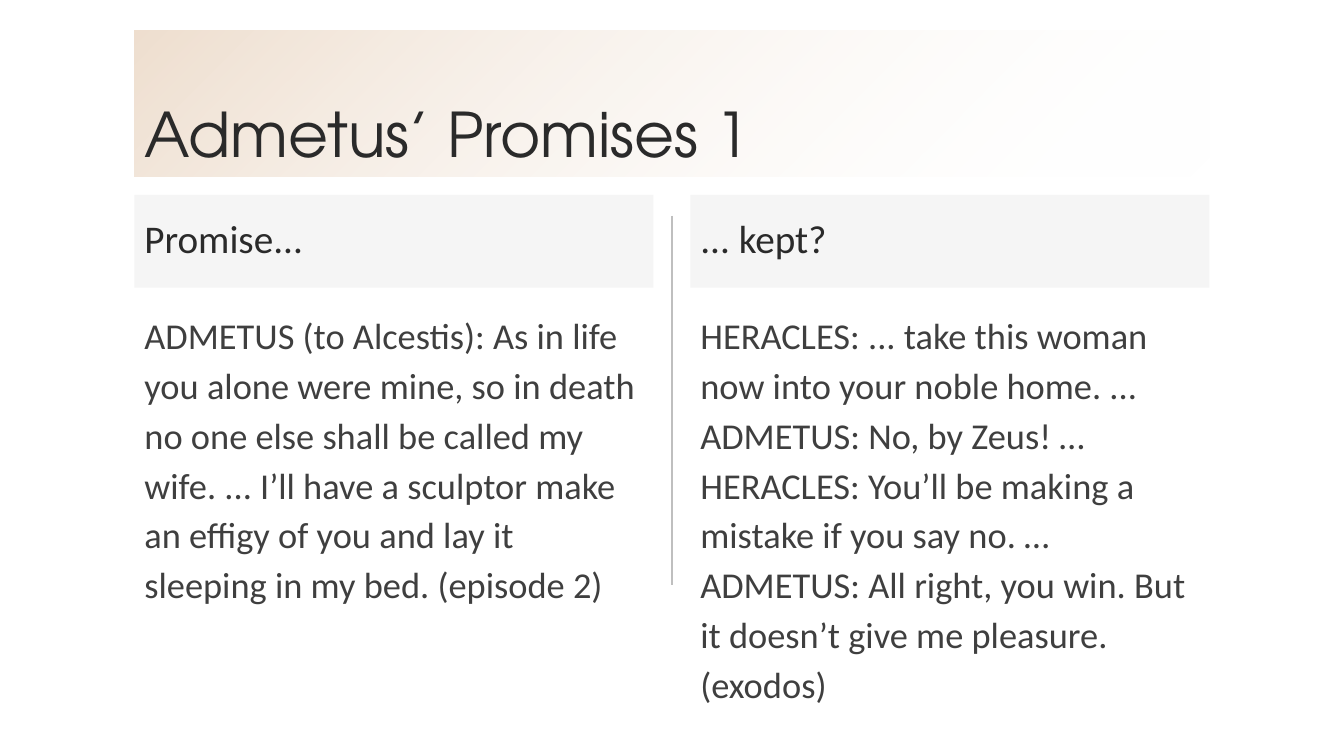
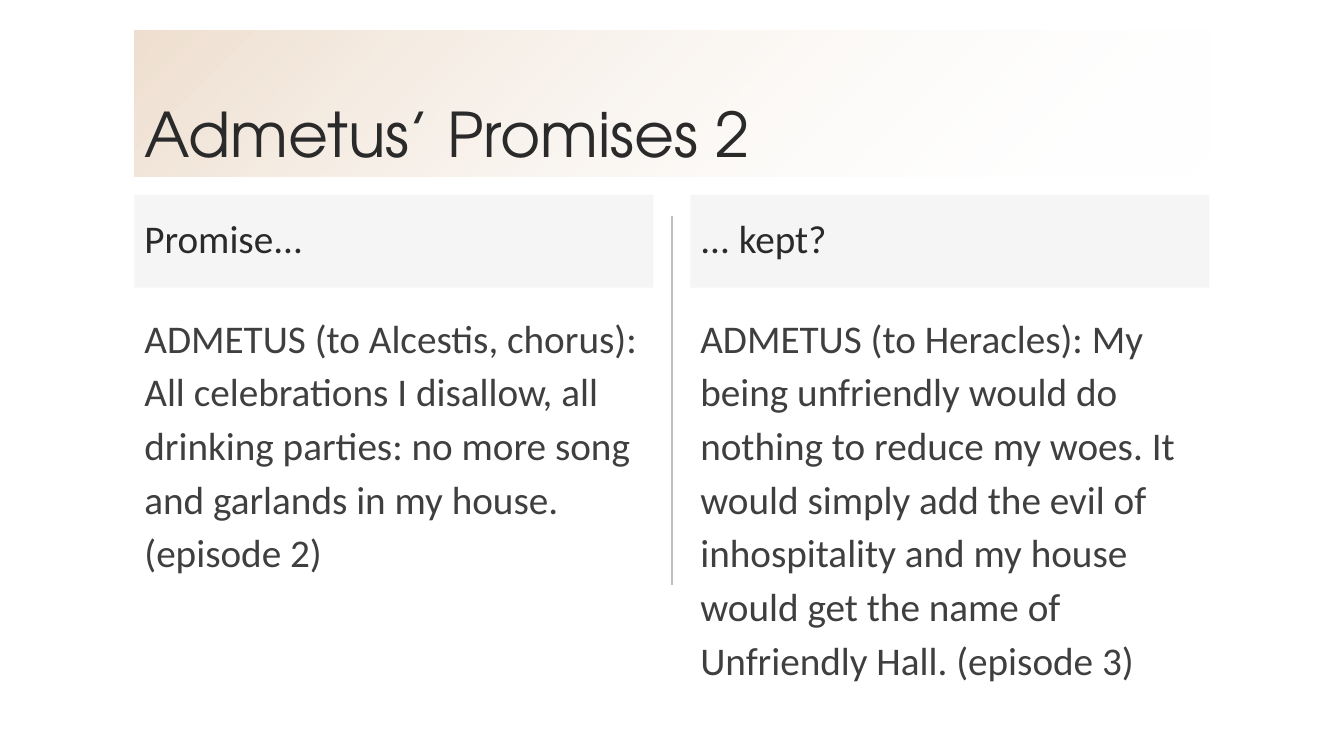
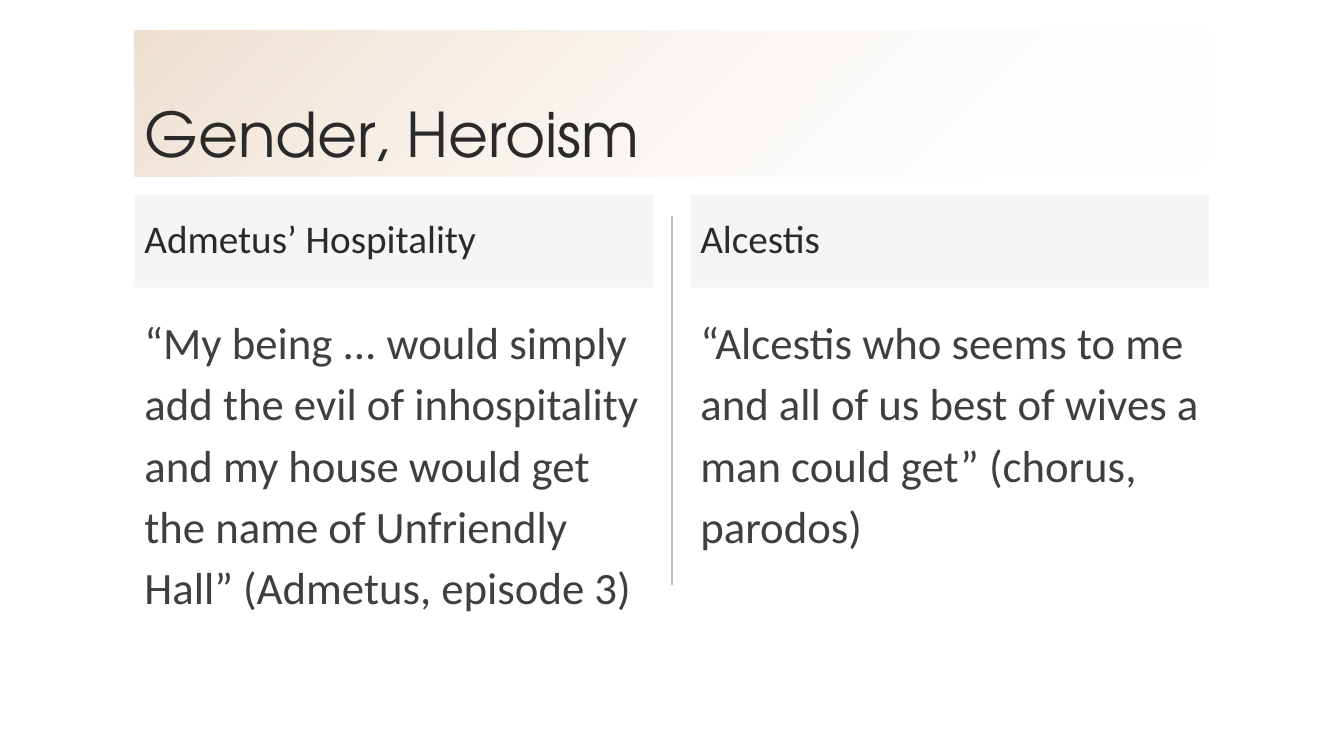
from lxml import etree
from pptx import Presentation
from pptx.dml.color import RGBColor
from pptx.enum.shapes import MSO_CONNECTOR, MSO_SHAPE
from pptx.enum.text import MSO_ANCHOR, PP_ALIGN
from pptx.oxml.ns import qn
from pptx.util import Cm, Pt

RECT = MSO_SHAPE.RECTANGLE
STRAIGHT = MSO_CONNECTOR.STRAIGHT
TOP, MIDDLE, BOTTOM = MSO_ANCHOR.TOP, MSO_ANCHOR.MIDDLE, MSO_ANCHOR.BOTTOM
LEFT = PP_ALIGN.LEFT

# Each column is a heading and its paragraphs.
SLIDES = [
    {
        "title": "Admetus’ Promises 1",
        "size": 26,
        "columns": [
            ("Promise...", [
                "ADMETUS (to Alcestis): As in life you alone were mine, so in death "
                "no one else shall be called my wife. ... I’ll have a sculptor make "
                "an effigy of you and lay it sleeping in my bed. (episode 2)",
            ]),
            ("... kept?", [
                "HERACLES: ... take this woman now into your noble home. ...",
                "ADMETUS: No, by Zeus! …",
                "HERACLES: You’ll be making a mistake if you say no. …",
                "ADMETUS: All right, you win. But it doesn’t give me pleasure. (exodos)",
            ]),
        ],
    },
    {
        "title": "Admetus’ Promises 2",
        "size": 28,
        "columns": [
            ("Promise...", [
                "ADMETUS (to Alcestis, chorus): All celebrations I disallow, all "
                "drinking parties: no more song and garlands in my house. (episode 2)",
            ]),
            ("... kept?", [
                "ADMETUS (to Heracles): My being unfriendly would do nothing to "
                "reduce my woes. It would simply add the evil of inhospitality and "
                "my house would get the name of Unfriendly Hall. (episode 3)",
            ]),
        ],
    },
    {
        "title": "Gender, Heroism",
        "size": 32,
        "columns": [
            ("Admetus’ Hospitality", [
                "“My being ... would simply add the evil of inhospitality and my "
                "house would get the name of Unfriendly Hall” (Admetus, episode 3)",
            ]),
            ("Alcestis", [
                "“Alcestis who seems to me and all of us best of wives a man could "
                "get” (chorus, parodos)",
            ]),
        ],
    },
]

TITLE_FONT, BODY_FONT = "TeX Gyre Adventor", "Calibri"
DARK, TEXT, GREY, TAN, WHITE = "2A2A2A", "3F3F3F", "BFBFBF", "CE9F71", "FFFFFF"

# Lengths in centimetres
SLIDE_W, SLIDE_H = 33.87, 19.05
MARGIN = 3.39
CONTENT_W = SLIDE_W - 2 * MARGIN
COLUMN_W = 13.08
COLUMN_STEP = CONTENT_W - COLUMN_W
TITLE_Y, TITLE_H = 0.76, 3.68
HEADING_Y, HEADING_H = 4.91, 2.34
BODY_Y = 7.62
DIVIDER_Y1, DIVIDER_Y2 = 5.44, 14.73


def rgb(color):
    return RGBColor.from_string(color)


def set_alpha(fill, percents):
    """Give each colour of a fill, in order, an opacity in percent."""
    for color, percent in zip(fill.iter(qn("a:srgbClr")), percents):
        etree.SubElement(color, qn("a:alpha")).set("val", str(percent * 1000))


def add_panel(s, x, y, w, h):
    panel = s.shapes.add_shape(RECT, Cm(x), Cm(y), Cm(w), Cm(h))
    panel.shadow.inherit = False
    panel.line.fill.background()
    return panel


def write(sp, paragraphs, size, font=BODY_FONT, color=DARK, anchor=MIDDLE, spacing=0.9):
    tf = sp.text_frame
    tf.word_wrap = True
    tf.vertical_anchor = anchor
    for i, text in enumerate(paragraphs):
        p = tf.paragraphs[0] if i == 0 else tf.add_paragraph()
        p.alignment = LEFT
        p.line_spacing = spacing
        r = p.add_run()
        r.text = text
        r.font.size = Pt(size)
        r.font.name = font
        r.font.color.rgb = rgb(color)


def add_title(s, text):
    band = add_panel(s, MARGIN, TITLE_Y, CONTENT_W, TITLE_H)
    band.fill.gradient()
    band.fill.gradient_angle = 315
    for stop, color, position in zip(band.fill.gradient_stops, (TAN, WHITE), (0, 1)):
        stop.color.rgb = rgb(color)
        stop.position = position
    set_alpha(band.element.spPr.find(qn("a:gradFill")), (34, 0))
    write(band, [text], 44, font=TITLE_FONT, anchor=BOTTOM)


def add_divider(s):
    x = Cm(SLIDE_W / 2)
    line = s.shapes.add_connector(STRAIGHT, x, Cm(DIVIDER_Y1), x, Cm(DIVIDER_Y2))
    line.line.color.rgb = rgb(GREY)
    line.line.width = Pt(1)
    etree.SubElement(line.element.spPr, qn("a:effectLst"))


def add_column(s, x, heading, paragraphs, size):
    panel = add_panel(s, x, HEADING_Y, COLUMN_W, HEADING_H)
    panel.fill.solid()
    panel.fill.fore_color.rgb = rgb(GREY)
    set_alpha(panel.element.spPr.find(qn("a:solidFill")), (15,))
    write(panel, [heading], 28)
    body = s.shapes.add_textbox(Cm(x), Cm(BODY_Y), Cm(COLUMN_W), Cm(SLIDE_H - BODY_Y))
    write(body, paragraphs, size, color=TEXT, anchor=TOP, spacing=1.14)


def main():
    prs = Presentation()
    prs.slide_width, prs.slide_height = Cm(SLIDE_W), Cm(SLIDE_H)
    for content in SLIDES:
        s = prs.slides.add_slide(prs.slide_layouts[6])
        add_divider(s)
        add_title(s, content["title"])
        for i, (heading, paragraphs) in enumerate(content["columns"]):
            add_column(s, MARGIN + i * COLUMN_STEP, heading, paragraphs, content["size"])
    prs.save("out.pptx")


if __name__ == "__main__":
    main()
